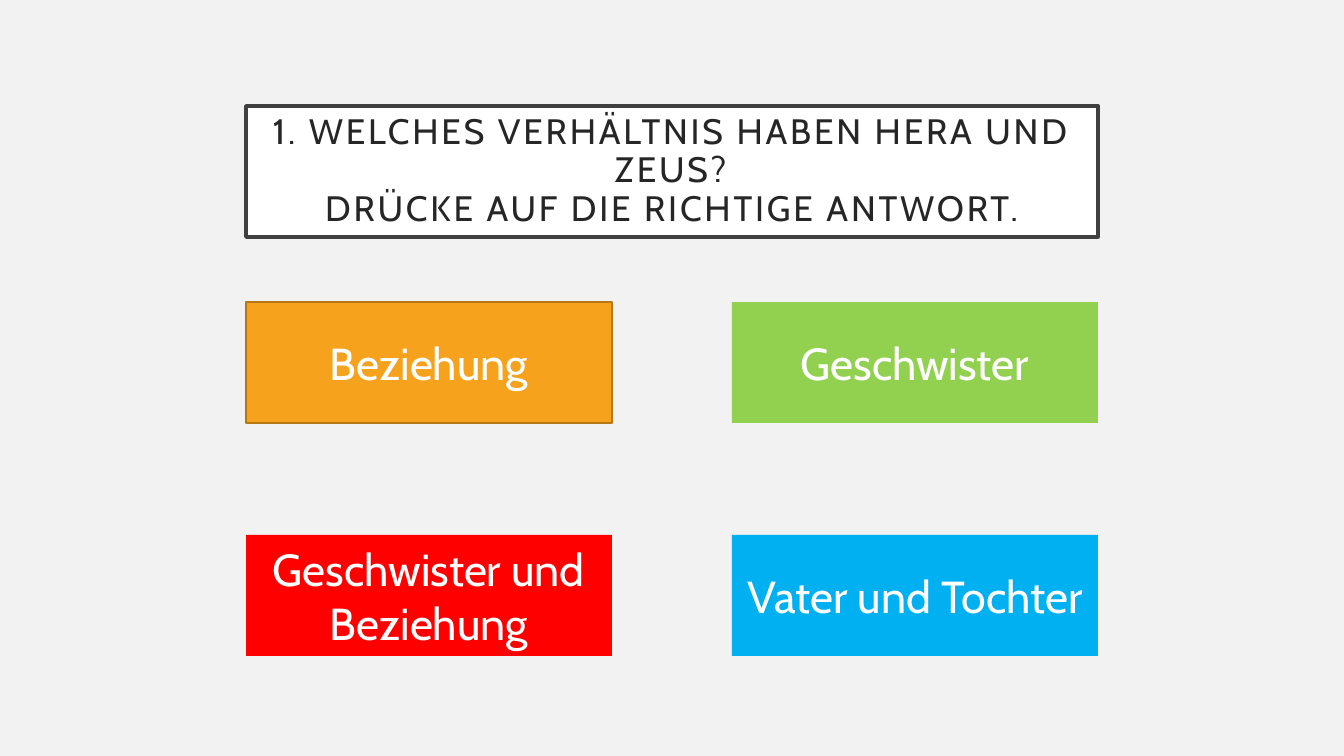
from pptx import Presentation
from pptx.dml.color import RGBColor
from pptx.enum.shapes import MSO_SHAPE
from pptx.enum.text import MSO_ANCHOR, PP_ALIGN
from pptx.util import Pt

SLIDE_W, SLIDE_H = 1344, 756
EMU_PER_PX = 12192000 / SLIDE_W
FONT = "Cabin"

BACKGROUND = RGBColor(0xF2, 0xF2, 0xF2)
WHITE = RGBColor(0xFF, 0xFF, 0xFF)
INK = RGBColor(0x26, 0x26, 0x26)
FRAME = RGBColor(0x40, 0x40, 0x40)
ORANGE = RGBColor(0xF6, 0xA2, 0x1D)
DARK_ORANGE = RGBColor(0xB6, 0x78, 0x15)
GREEN = RGBColor(0x92, 0xD0, 0x50)
RED = RGBColor(0xFF, 0x00, 0x00)
BLUE = RGBColor(0x00, 0xB0, 0xF0)


def px(length):
    return round(length * EMU_PER_PX)


def add_box(left, top, width, height, text, fill, ink, size, line=None, line_width=1):
    box = slide.shapes.add_shape(
        MSO_SHAPE.RECTANGLE, px(left), px(top), px(width), px(height))
    box.shadow.inherit = False
    box.fill.solid()
    box.fill.fore_color.rgb = fill
    if line is None:
        box.line.fill.background()
    else:
        box.line.color.rgb = line
        box.line.width = Pt(line_width)
    frame = box.text_frame
    frame.word_wrap = True
    frame.vertical_anchor = MSO_ANCHOR.MIDDLE
    frame.text = text
    paragraph = frame.paragraphs[0]
    paragraph.alignment = PP_ALIGN.CENTER
    for run in paragraph.runs:
        run.font.name = FONT
        run.font.size = Pt(size)
        run.font.color.rgb = ink
    return box


prs = Presentation()
prs.slide_width, prs.slide_height = px(SLIDE_W), px(SLIDE_H)
slide = prs.slides.add_slide(prs.slide_layouts[6])
slide.background.fill.solid()
slide.background.fill.fore_color.rgb = BACKGROUND

# Question, with widely spaced letters
question = add_box(
    246, 106, 852, 131,
    "1. WELCHES VERHÄLTNIS HABEN HERA UND ZEUS?\vDRÜCKE AUF DIE RICHTIGE ANTWORT.",
    WHITE, INK, 25.2, FRAME, 2.5).text_frame
question.margin_left = question.margin_right = px(20)
question.margin_top = question.margin_bottom = px(20)
question.paragraphs[0].line_spacing = 0.9
for run in question.paragraphs[0].runs:
    run.font._element.set("spc", "200")

# Answers in a grid of two by two
ANSWER_W, ANSWER_H = 366, 121
COLUMNS, ROWS = (246, 732), (302, 535)
answers = [
    ("Beziehung", ORANGE, DARK_ORANGE, 0, 0),
    ("Geschwister und Beziehung", RED, None, 0, 1),
    ("Vater und Tochter", BLUE, None, 1, 1),
    ("Geschwister", GREEN, None, 1, 0),
]
for answer, fill, outline, column, row in answers:
    add_box(COLUMNS[column], ROWS[row], ANSWER_W, ANSWER_H,
            answer, fill, WHITE, 32, outline)

prs.save("out.pptx")
